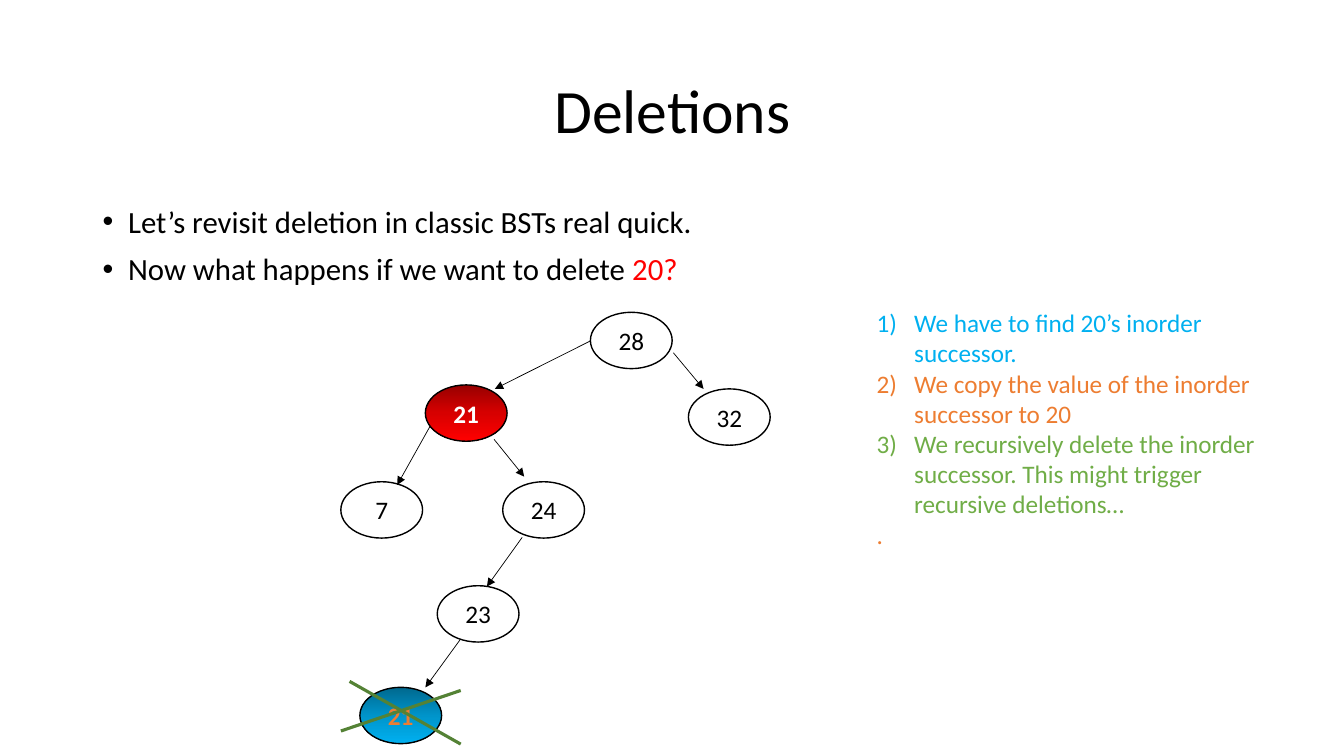
from copy import deepcopy

from pptx import Presentation
from pptx.dml.color import RGBColor
from pptx.enum.shapes import MSO_CONNECTOR as CONN, MSO_SHAPE as SHAPE
from pptx.enum.text import MSO_ANCHOR as ANCHOR, PP_ALIGN as ALIGN
from pptx.oxml.ns import qn
from pptx.util import Cm, Pt
from lxml.etree import SubElement

BLACK, RED, ORANGE = "000000", "FF0000", "ED7D31"
TITLE = [("Deletions", BLACK)]
BULLETS = [
    [("Let’s revisit deletion in classic BSTs real quick.", BLACK)],
    [("Now what happens if we want to delete ", BLACK), ("20?", RED)],
]
STEPS = [
    ("We have to find 20’s inorder successor.", "00B0F0"),
    ("We copy the value of the inorder successor to 20", ORANGE),
    ("We recursively delete the inorder successor. "
     "This might trigger recursive deletions…", "70AD47"),
]
END_MARK = [(".", ORANGE)]

NODE_W, NODE_H = 2.06, 1.42
NODES = [
    ("28", 14.88, 7.87),
    ("7", 8.59, 12.14),
    ("32", 17.35, 9.8),
    ("24", 12.67, 12.14),
    ("23", 11.02, 14.76),
]
COLOURED_NODES = [
    ("21", 9.07, 17.32, ORANGE, ("00688E", "0094CA", "00B0F0")),
    ("21", 10.72, 9.7, "FFFFFF", ("970000", "D70000", RED)),
]
EDGES = [
    (14.88, 8.59, 12.47, 9.8),
    (10.85, 10.72, 10.01, 12.22),
    (12.45, 11.07, 13.21, 12.01),
    (16.97, 8.89, 17.73, 9.8),
    (13.16, 13.54, 12.27, 14.78),
    (11.61, 16.1, 10.72, 17.32),
]
CROSS = [(8.81, 17.17, 11.61, 18.75), (8.59, 18.42, 11.61, 17.4)]


def rgb(colour):
    """Turn a hex string into a colour."""
    return RGBColor.from_string(colour)


def add_runs(p, runs, size, bold=False):
    """Add (text, colour) runs to a paragraph."""
    for text, colour in runs:
        r = p.add_run()
        r.text = text
        r.font.name, r.font.size, r.font.bold = "Calibri", Pt(size), bold
        r.font.color.rgb = rgb(colour)


def set_bullet(p, indent, tag, **attrs):
    """Give a paragraph a hanging bullet or number."""
    pPr = p._p.get_or_add_pPr()
    pPr.set("marL", str(Cm(indent)))
    pPr.set("indent", str(-Cm(indent)))
    if tag == "a:buChar":
        SubElement(pPr, qn("a:buFont"), typeface="Arial")
    SubElement(pPr, qn(tag), **attrs)


def add_text(slide, x, y, w, h, paragraphs, size):
    """Add a text box and return its text frame."""
    tf = slide.shapes.add_textbox(Cm(x), Cm(y), Cm(w), Cm(h)).text_frame
    tf.word_wrap = True
    for i, runs in enumerate(paragraphs):
        p = tf.add_paragraph() if i else tf.paragraphs[0]
        add_runs(p, runs, size)
    return tf


def add_node(slide, text, x, y, colour=BLACK, shades=None):
    """Add a tree node, shaded from top to bottom if shades are given."""
    sp = slide.shapes.add_shape(SHAPE.OVAL, Cm(x), Cm(y), Cm(NODE_W), Cm(NODE_H))
    sp.shadow.inherit = False
    sp.line.color.rgb, sp.line.width = rgb(BLACK), Pt(1)
    if shades:
        sp.fill.gradient()
        sp.fill.gradient_angle = 270
        first = sp.fill._xPr.find(qn("a:gradFill")).find(qn("a:gsLst"))[0]
        first.addnext(deepcopy(first))
        for i, (stop, shade) in enumerate(zip(sp.fill.gradient_stops, shades)):
            stop.position, stop.color.rgb = i / 2, rgb(shade)
    else:
        sp.fill.background()
    tf = sp.text_frame
    tf.vertical_anchor = ANCHOR.MIDDLE
    p = tf.paragraphs[0]
    p.alignment = ALIGN.CENTER
    add_runs(p, [(text, colour)], 18, bool(shades))


def add_line(slide, ends, colour, width, arrow=False):
    """Add a straight line, with an arrowhead if asked."""
    cn = slide.shapes.add_connector(CONN.STRAIGHT, *map(Cm, ends))
    cn.line.color.rgb, cn.line.width = rgb(colour), Pt(width)
    if arrow:
        SubElement(cn.line._get_or_add_ln(), qn("a:tailEnd"), type="triangle")
    SubElement(cn._element.spPr, qn("a:effectLst"))


def main():
    """Build the slide on deleting from a binary search tree."""
    prs = Presentation()
    prs.slide_width, prs.slide_height = Cm(33.87), Cm(19.05)
    slide = prs.slides.add_slide(prs.slide_layouts[6])

    tf = add_text(slide, 2.34, 1.02, 29.21, 3.68, [TITLE], 44)
    tf.vertical_anchor = ANCHOR.MIDDLE
    tf.paragraphs[0].alignment = ALIGN.CENTER
    tf.paragraphs[0].line_spacing = 0.9

    tf = add_text(slide, 2.34, 5.08, 29.21, 12.09, BULLETS, 22)
    for p in tf.paragraphs:
        p.line_spacing, p.space_before = 0.9, Pt(10)
        set_bullet(p, 0.64, "a:buChar", char="•")

    steps = [[step] for step in STEPS]
    tf = add_text(slide, 21.84, 7.62, 10.52, 7.19, steps + [END_MARK], 18)
    for p in tf.paragraphs[:len(STEPS)]:
        set_bullet(p, 0.95, "a:buAutoNum", type="arabicParenR")

    for ends in EDGES:
        add_line(slide, ends, BLACK, 0.5, arrow=True)
    for node in NODES + COLOURED_NODES:
        add_node(slide, *node)
    for ends in CROSS:
        add_line(slide, ends, "548235", 2.25)

    prs.save("out.pptx")


if __name__ == "__main__":
    main()
